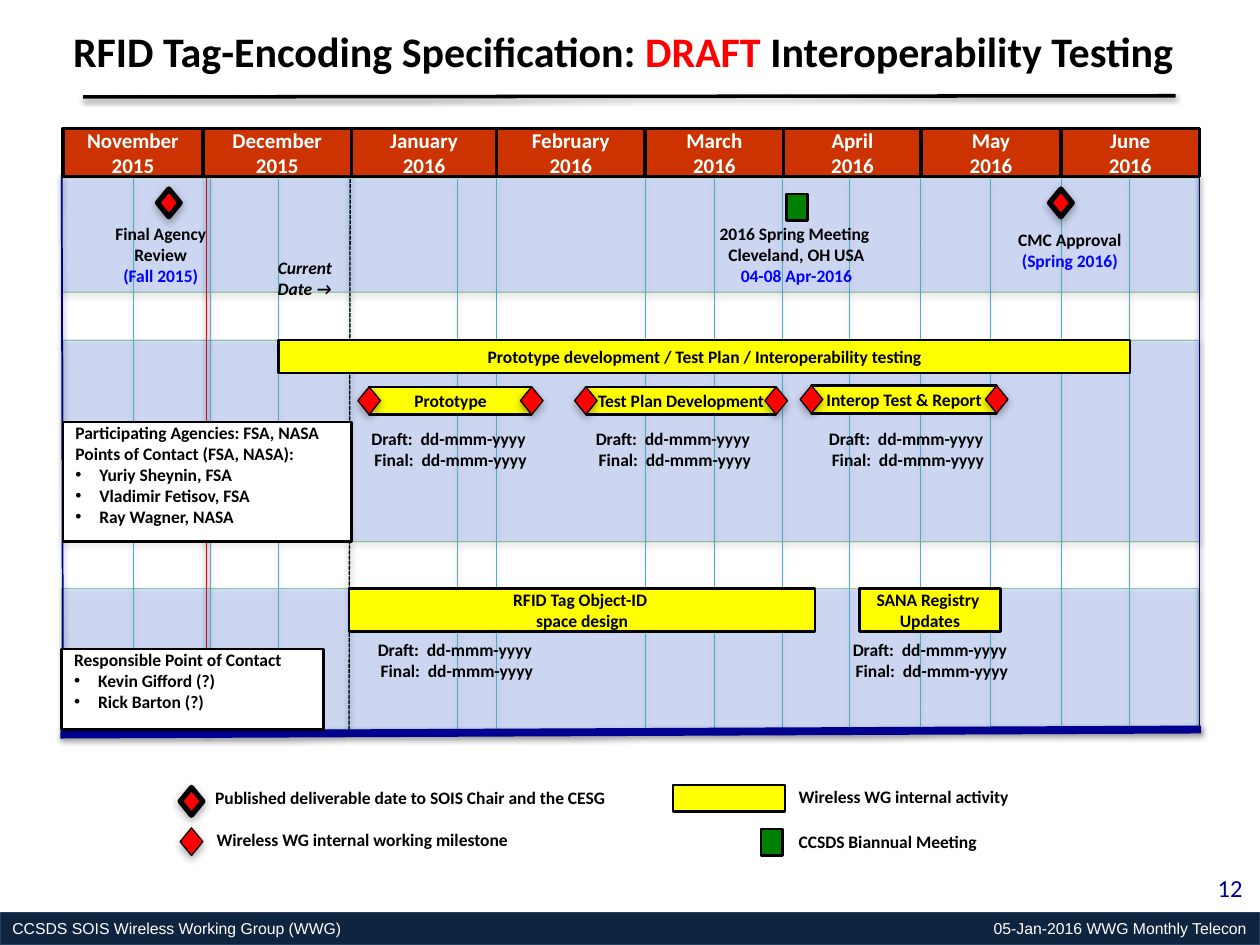
import pptx
import pptx.util
from lxml import etree
from pptx.dml.color import RGBColor
from pptx.enum.dml import MSO_LINE
from pptx.enum.shapes import MSO_CONNECTOR, MSO_SHAPE
from pptx.enum.text import MSO_ANCHOR, PP_ALIGN
from pptx.oxml.ns import qn

PX = 9144  # EMU in one px, 100 px to the inch
C = dict(black="000000", white="FFFFFF", red="FF0000", blue="0000FF", navy="000090",
         yellow="FFFF00", green="008000", header="CC3300", band="3366FF",
         bandline="008000", grid="4BACC6", footer="0F243E", footline="254061")
LEFT, CENTER, RIGHT = PP_ALIGN.LEFT, PP_ALIGN.CENTER, PP_ALIGN.RIGHT

TITLE = [("RFID Tag-Encoding Specification: ", "black"), ("DRAFT", "red"),
         (" Interoperability Testing", "black")]
MONTHS = ["November\n2015", "December\n2015", "January\n2016", "February\n2016",
          "March\n2016", "April\n2016", "May\n2016", "June\n2016"]
MONTH_EDGES = [50, 161, 279, 394, 512, 622, 731, 842, 952]
GRID_X = [106, 167, 221, 277, 363, 394, 512, 567, 621, 674, 730, 786, 842, 896]
BANDS = [(50, 270, 902, 160), (49, 467, 902, 112), (49, 141, 902, 91)]
# x1, y1, x2, y2, colour, width, dash
FRAME = [(48, 583, 953, 579, "navy", 4.5, None),
         (66, 77, 933, 76, "black", 2, None),
         (278, 138, 277, 580, "black", 0.75, MSO_LINE.SQUARE_DOT),
         (49, 138, 50, 583, "navy", 1, None),
         (952, 138, 952, 578, "navy", 1, None)]
ACTIVITIES = [
    (221, 270, 676, 26, "Prototype development / Test Plan / Interoperability testing"),
    (277, 467, 370, 34, "RFID Tag Object-ID \nspace design"),
    (682, 467, 112, 34, "SANA Registry \nUpdates"),
    (534, 623, 89, 21, "")]
WORK_ITEMS = [(293, 307, 129, "Prototype"), (465, 307, 151, "Test Plan Development"),
              (644, 306, 147, "Interop Test & Report")]
DELIVERABLES = [(143, 625), (833, 150), (125, 150)]
MEETINGS = [(604, 658), (624, 154)]
LEGEND_MILESTONE = (143, 657)
DATES = "Draft:  dd-mmm-yyyy\n Final:  dd-mmm-yyyy"
DATE_SPOTS = [(281, 335), (459, 335), (644, 335), (286, 502), (663, 502)]
# x, y, w, h, text, whether the last line is blue
EVENTS = [(783, 177, 132, 44, "CMC Approval\n(Spring 2016)", True),
          (72, 172, 111, 61, "Final Agency Review\n(Fall 2015)", True),
          (561, 172, 142, 61,
           "2016 Spring Meeting \nCleveland, OH USA\n04-08 Apr-2016", True)]
LEGEND = [(161, 620, 376, "Published deliverable date to SOIS Chair and the CESG"),
          (162, 653, 265, "Wireless WG internal working milestone"),
          (624, 619, 189, "Wireless WG internal activity"),
          (624, 655, 189, "CCSDS Biannual Meeting")]
# x, y, w, h, heading, bulleted names
CONTACTS = [(50, 335, 229, 95,
             "Participating Agencies: FSA, NASA\nPoints of Contact (FSA, NASA):",
             ["Yuriy Sheynin, FSA", "Vladimir Fetisov, FSA", "Ray Wagner, NASA"]),
            (49, 515, 208, 64, "Responsible Point of Contact",
             ["Kevin Gifford (?)", "Rick Barton (?)"])]


def rgb(name):
    return RGBColor.from_string(C[name])


def box(*lengths):
    return [n * PX for n in lengths]


def add_shadow(effects, alpha, blur, dist):
    """Put a downward black shadow, sized in points, in an effect list."""
    shadow = etree.SubElement(effects, qn("a:outerShdw"), blurRad=str(int(blur * 12700)),
                              dist=str(int(dist * 12700)), dir="5400000", rotWithShape="0")
    color = etree.SubElement(shadow, qn("a:srgbClr"), val=C["black"])
    etree.SubElement(color, qn("a:alpha"), val=str(alpha * 1000))


def set_alpha(parent, percent):
    color = parent.find(qn("a:solidFill"))[0]
    etree.SubElement(color, qn("a:alpha"), val=str(percent * 1000))


def write(sp, text, size=10, color="black", bold=True, align=CENTER, font="Calibri"):
    tf = sp.text_frame
    tf.text = text
    for p in tf.paragraphs:
        p.alignment = align
        for r in p.runs:
            f = r.font
            f.name, f.size, f.bold = font, pptx.util.Pt(size), bold
            f.color.rgb = rgb(color)
    return tf


def add_box(s, x, y, w, h, fill, line="black", width=1.5, kind=MSO_SHAPE.RECTANGLE, shadow=None):
    sp = s.shapes.add_shape(kind, *box(x, y, w, h))
    sp.fill.solid()
    sp.fill.fore_color.rgb = rgb(fill)
    sp.line.color.rgb = rgb(line)
    sp.line.width = pptx.util.Pt(width)
    sp.shadow.inherit = False
    if shadow:
        add_shadow(sp._element.spPr.find(qn("a:effectLst")), *shadow)
    tf = sp.text_frame
    tf.word_wrap = False
    tf.vertical_anchor = MSO_ANCHOR.MIDDLE
    return sp


def add_diamond(s, x, y, width=0.75):
    add_box(s, x, y, 18, 22, "red", width=width, kind=MSO_SHAPE.DIAMOND, shadow=(35, 5, 1.8))


def add_text(s, x, y, w, h, text, **style):
    sp = s.shapes.add_textbox(*box(x, y, w, h))
    sp.text_frame.word_wrap = True
    return write(sp, text, **style)


def add_line(s, x1, y1, x2, y2, color, width, dash=None):
    c = s.shapes.add_connector(MSO_CONNECTOR.STRAIGHT, *box(x1, y1, x2, y2))
    c.line.color.rgb = rgb(color)
    c.line.width = pptx.util.Pt(width)
    if dash:
        c.line.dash_style = dash
    add_shadow(etree.SubElement(c._element.spPr, qn("a:effectLst")), 38, 3.1, 1.6)


def add_title(s):
    sp = s.shapes.title
    sp.left, sp.top, sp.width, sp.height = box(48, 15, 903, 50)
    tf = sp.text_frame
    tf.word_wrap = False
    tf.vertical_anchor = MSO_ANCHOR.TOP
    p = tf.paragraphs[0]
    p.alignment = LEFT
    for text, color in TITLE:
        r = p.add_run()
        r.text = text
        r.font.name, r.font.size, r.font.bold = "Calibri", pptx.util.Pt(24), True
        r.font.color.rgb = rgb(color)


def add_contacts(s, x, y, w, h, heading, names):
    sp = add_box(s, x, y, w, h, "white")
    tf = write(sp, "\n".join([heading] + names), align=LEFT)
    tf.word_wrap = True
    tf.vertical_anchor = MSO_ANCHOR.TOP
    tf.margin_top = 0
    for p in tf.paragraphs[-len(names):]:
        pPr = p._p.get_or_add_pPr()
        pPr.set("marL", str(19 * PX))
        pPr.set("indent", str(-19 * PX))
        etree.SubElement(pPr, qn("a:buFont"), typeface="Arial")
        etree.SubElement(pPr, qn("a:buChar"), char="•")


def main():
    prs = pptx.Presentation()
    prs.slide_width, prs.slide_height = box(1000, 750)
    s = prs.slides.add_slide(prs.slide_layouts[5])
    add_title(s)

    footer = add_box(s, 0, 724, 1000, 26, "footer", "footline", 0.75)
    small = dict(size=9, color="white", bold=False, font="Arial")
    write(footer, "CCSDS SOIS Wireless Working Group (WWG)", align=LEFT, **small).word_wrap = True
    tf = add_text(s, 700, 724, 299, 26, "05-Jan-2016 WWG Monthly Telecon", align=RIGHT, **small)
    tf.vertical_anchor = MSO_ANCHOR.MIDDLE
    add_text(s, 930, 688, 66, 35, "12", size=14, color="navy", bold=False, align=RIGHT)

    add_line(s, 164, 138, 164, 583, "red", 1)
    for band in BANDS:
        sp = add_box(s, *band, "band", "bandline", 0.75, shadow=(35, 3.1, 1.8))
        set_alpha(sp._element.spPr, 18)
        set_alpha(sp._element.spPr.find(qn("a:ln")), 33)
    for x in GRID_X:
        add_line(s, x, 142, x, 582, "grid", 0.25, MSO_LINE.ROUND_DOT)
    for line in FRAME:
        add_line(s, *line)
    for month, x, end in zip(MONTHS, MONTH_EDGES, MONTH_EDGES[1:]):
        write(add_box(s, x, 102, end - x, 38, "header", width=2), month, size=12, color="white")

    for *place, text in ACTIVITIES:
        write(add_box(s, *place, "yellow"), text)
    for x, y, w, text in WORK_ITEMS:
        write(add_box(s, x, y, w, 22, "yellow"), text)
        for end in (x, x + w):
            add_diamond(s, end - 9, y)
    add_diamond(s, *LEGEND_MILESTONE)
    for x, y in DELIVERABLES:
        add_diamond(s, x, y, 3)
    for x, y in MEETINGS:
        add_box(s, x, y, 17, 21, "green")

    for *place, text, blue_end in EVENTS:
        tf = add_text(s, *place, text)
        if blue_end:
            tf.paragraphs[-1].runs[0].font.color.rgb = rgb("blue")
    tf = add_text(s, 207, 199, 70, 44, "Current Date →")
    tf.paragraphs[0].runs[0].font.italic = True
    for x, y in DATE_SPOTS:
        add_text(s, x, y, 150, 44, DATES)
    for x, y, w, text in LEGEND:
        add_text(s, x, y, w, 27, text, align=LEFT)
    for contact in CONTACTS:
        add_contacts(s, *contact)
    prs.save("out.pptx")


if __name__ == "__main__":
    main()
